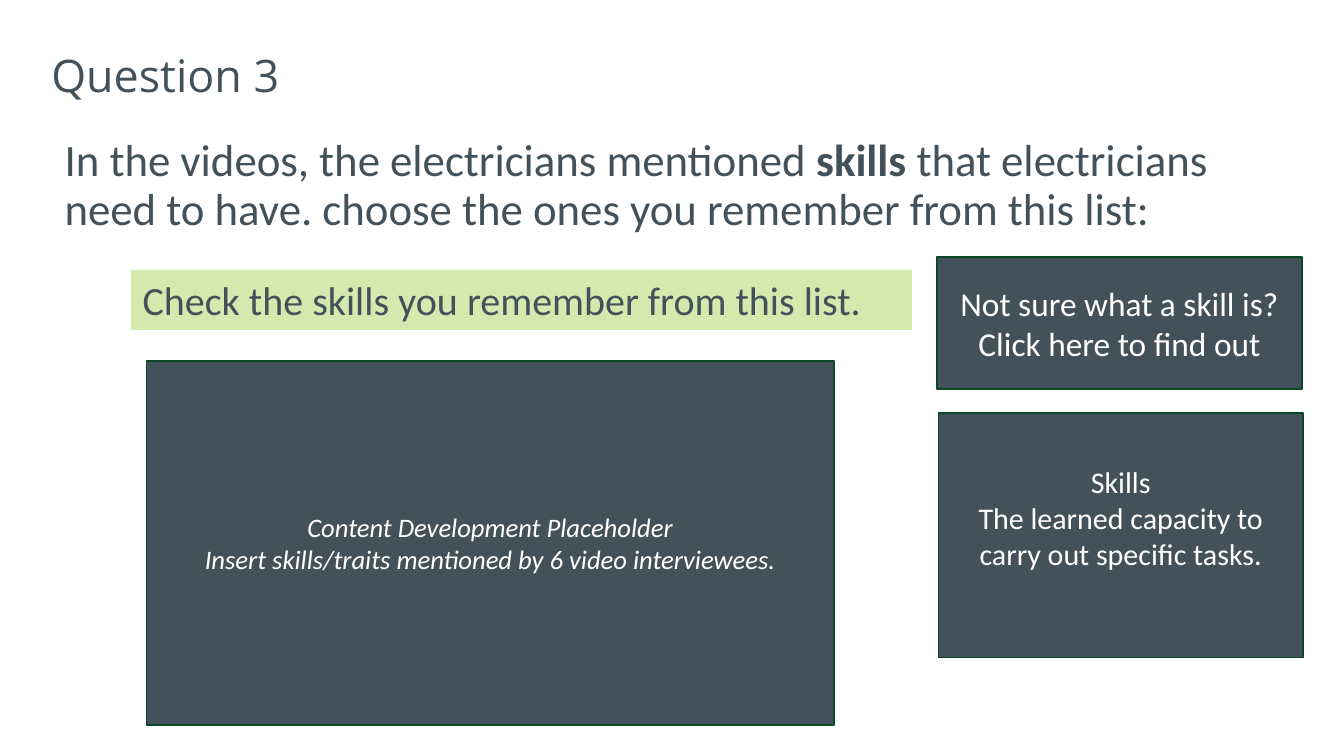
import pptx
import pptx.util
import pptx.dml.color
import pptx.enum.shapes
import pptx.enum.text
from dataclasses import dataclass

Inches = pptx.util.Inches
Pt = pptx.util.Pt
Align = pptx.enum.text.PP_ALIGN
Anchor = pptx.enum.text.MSO_ANCHOR


@dataclass(frozen=True)
class Theme:
    slate: str = "43525A"
    white: str = "FFFFFF"
    lime: str = "D3E9AD"
    border: str = "094724"
    title_font: str = "Open Sans"
    body_font: str = "Calibri"
    heading: float = 26.9
    prompt: float = 24
    button: float = 20
    definition: float = 18
    note: float = 16


THEME = Theme()

TITLE = ["Question 3"]
QUESTION = [
    ("In the videos, the electricians mentioned ", False),
    ("skills", True),
    (" that electricians need to have. choose the ones you remember from this list:", False),
]
PROMPT = ["Check the skills you remember from this list."]
PANELS = [
    {"place": (1.22, 3.01, 5.73, 3.03), "size": THEME.note, "italic": True, "bottom": 0.04,
     "lines": ["Content Development Placeholder",
               "Insert skills/traits mentioned by 6 video interviewees."]},
    {"place": (7.82, 3.44, 3.04, 2.04), "size": THEME.definition, "italic": False, "bottom": 0.34,
     "lines": ["Skills", "The learned capacity to carry out specific tasks."]},
    {"place": (7.81, 2.14, 3.04, 1.1), "size": THEME.button, "italic": False, "bottom": 0.04,
     "lines": ["Not sure what a skill is? Click here to find out"]},
]


def color(value):
    return pptx.dml.color.RGBColor.from_string(value)


def write(box, lines, size, ink, font=THEME.body_font, align=Align.LEFT,
          anchor=Anchor.TOP, spacing=1.0, italic=False):
    frame = box.text_frame
    frame.word_wrap = True
    frame.vertical_anchor = anchor
    for index, line in enumerate(lines):
        para = frame.add_paragraph() if index else frame.paragraphs[0]
        para.alignment = align
        para.line_spacing = spacing
        pieces = [(line, False)] if isinstance(line, str) else line
        for text, bold in pieces:
            span = para.add_run()
            span.text = text
            span.font.name = font
            span.font.size = Pt(size)
            span.font.bold = bold
            span.font.italic = italic
            span.font.color.rgb = color(ink)


def add_text(page, place):
    return page.shapes.add_textbox(*map(Inches, place))


def add_panel(page, panel):
    box = page.shapes.add_shape(
        pptx.enum.shapes.MSO_SHAPE.RECTANGLE, *map(Inches, panel["place"]))
    box.shadow.inherit = False
    box.fill.solid()
    box.fill.fore_color.rgb = color(THEME.slate)
    box.line.color.rgb = color(THEME.border)
    box.line.width = Pt(1)
    frame = box.text_frame
    frame.margin_left = frame.margin_right = Inches(0.08)
    frame.margin_top = Inches(0.04)
    frame.margin_bottom = Inches(panel["bottom"])
    write(box, panel["lines"], panel["size"], THEME.white, align=Align.CENTER,
          anchor=Anchor.MIDDLE, italic=panel["italic"])


def main():
    deck = pptx.Presentation()
    deck.slide_width, deck.slide_height = Inches(11.2), Inches(6.3)
    page = deck.slides.add_slide(deck.slide_layouts[6])

    title = add_text(page, (0.33, 0.31, 5.83, 0.59))
    write(title, TITLE, THEME.heading, THEME.slate, font=THEME.title_font,
          anchor=Anchor.BOTTOM, spacing=0.9)
    question = add_text(page, (0.44, 1.1, 10.15, 1.03))
    write(question, [QUESTION], THEME.heading, THEME.slate, spacing=0.9)

    for panel in PANELS:
        add_panel(page, panel)

    prompt = add_text(page, (1.09, 2.25, 6.51, 0.5))
    prompt.fill.solid()
    prompt.fill.fore_color.rgb = color(THEME.lime)
    write(prompt, PROMPT, THEME.prompt, THEME.slate)

    deck.save("out.pptx")


if __name__ == "__main__":
    main()
